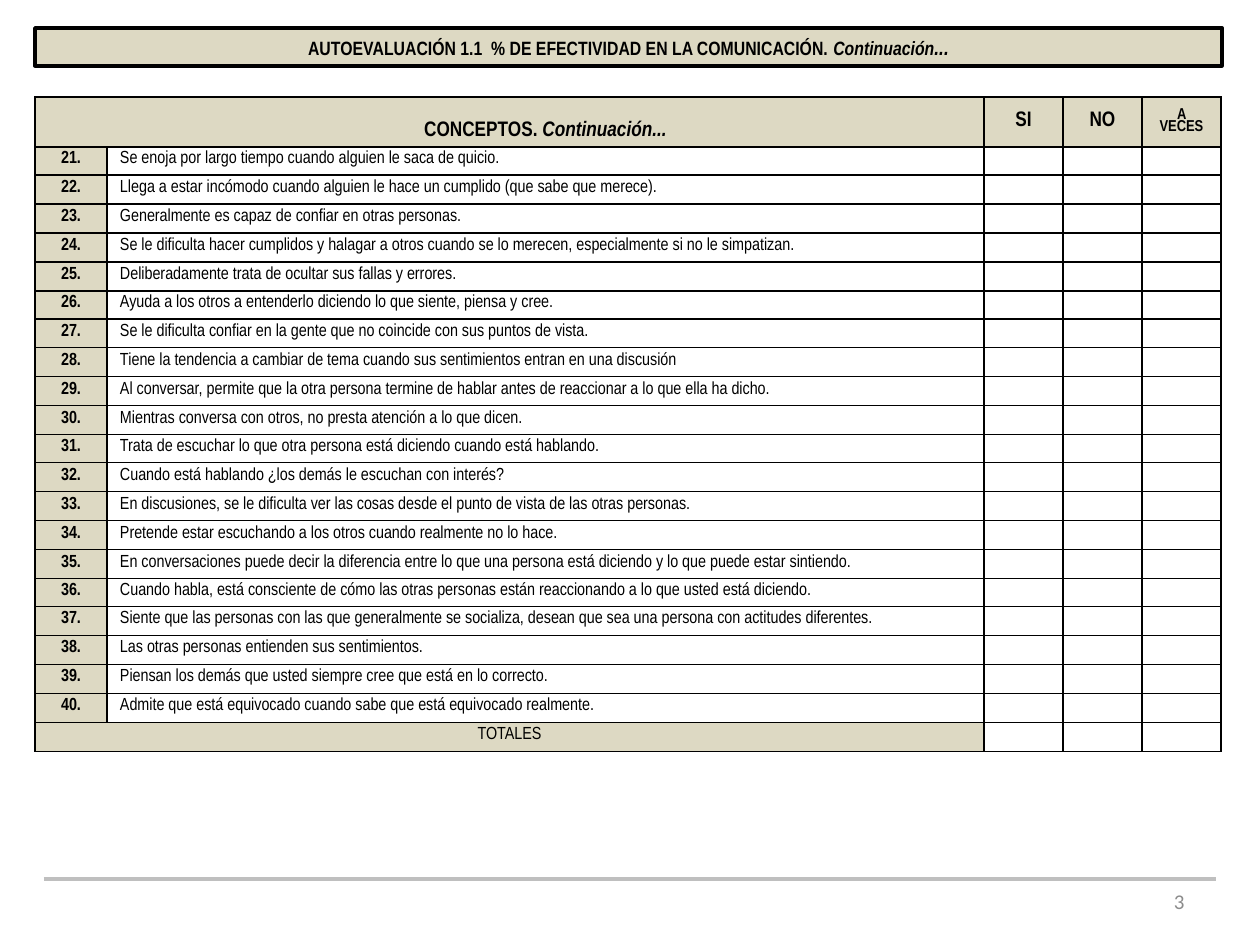
from lxml.etree import SubElement
from pptx import Presentation
from pptx.dml.color import RGBColor as Rgb
from pptx.enum.shapes import MSO_CONNECTOR as Connector, MSO_SHAPE as Shape
from pptx.enum.text import MSO_ANCHOR as Anchor, PP_ALIGN as Align
from pptx.oxml.ns import qn
from pptx.util import Emu, Pt

EMU_PER_PX = 914400 / 126
COLORS = {"black": "000000", "sand": "DDD9C3", "white": "FFFFFF", "rule": "BFBFBF", "number": "8C8C8C"}
NARROW = {"name": "Arial Narrow", "size": Pt(10), "bold": False, "italic": False}
BOLD = {**NARROW, "bold": True}
TITLE = {**BOLD, "size": Pt(11)}
HEADING = {**BOLD, "size": Pt(12)}
SMALL_HEADING = {**BOLD, "size": Pt(9)}
PAGE = {"name": "Calibri", "size": Pt(12)}
HEADER_INSETS = {"margin_left": 13, "margin_right": 13, "margin_top": 6, "margin_bottom": 6}
ROW_INSETS = {**HEADER_INSETS, "margin_top": 0, "margin_bottom": 3}

COLUMNS = [72, 877, 79, 79, 79]
HEADER_HEIGHT = 50
ROWS_HEIGHT = 605
FIRST_NUMBER = 21
STATEMENTS = [
    "Se enoja por largo tiempo cuando alguien le saca de quicio.",
    "Llega a estar incómodo cuando alguien le hace un cumplido (que sabe que merece).",
    "Generalmente es capaz de confiar en otras personas.",
    "Se le dificulta hacer cumplidos y halagar a otros cuando se lo merecen, especialmente si no le simpatizan.",
    "Deliberadamente trata de ocultar sus fallas y errores.",
    "Ayuda a los otros a entenderlo diciendo lo que siente, piensa y cree.",
    "Se le dificulta confiar en la gente que no coincide con sus puntos de vista.",
    "Tiene la tendencia a cambiar de tema cuando sus sentimientos entran en una discusión",
    "Al conversar, permite que la otra persona termine de hablar antes de reaccionar a lo que ella ha dicho.",
    "Mientras conversa con otros, no presta atención a lo que dicen.",
    "Trata de escuchar lo que otra persona está diciendo cuando está hablando.",
    "Cuando está hablando ¿los demás le escuchan con interés?",
    "En discusiones, se le dificulta ver las cosas desde el punto de vista de las otras personas.",
    "Pretende estar escuchando a los otros cuando realmente no lo hace.",
    "En conversaciones puede decir la diferencia entre lo que una persona está diciendo y lo que puede estar sintiendo.",
    "Cuando habla, está consciente de cómo las otras personas están reaccionando a lo que usted está diciendo.",
    "Siente que las personas con las que generalmente se socializa, desean que sea una persona con actitudes diferentes.",
    "Las otras personas entienden sus sentimientos.",
    "Piensan los demás que usted siempre cree que está en lo correcto.",
    "Admite que está equivocado cuando sabe que está equivocado realmente.",
]


def px(value):
    return Emu(round(value * EMU_PER_PX))


def color(name):
    return Rgb.from_string(COLORS[name])


class SlideBuilder:
    def __init__(self, slide):
        self.slide = slide

    def add_words(self, frame, runs, align, ink="black"):
        paragraph = frame.paragraphs[0]
        paragraph.alignment = align
        for words, style in runs:
            run = paragraph.add_run()
            run.text = words
            for key, value in style.items():
                setattr(run.font, key, value)
            run.font.color.rgb = color(ink)
        return paragraph

    def bar(self, left, top, width, height, runs):
        bar = self.slide.shapes.add_shape(Shape.RECTANGLE, *map(px, (left, top, width, height)))
        bar.shadow.inherit = False
        bar.fill.solid()
        bar.fill.fore_color.rgb = color("sand")
        bar.line.color.rgb = color("black")
        bar.line.width = Pt(2)
        bar.text_frame.word_wrap = True
        bar.text_frame.vertical_anchor = Anchor.MIDDLE
        self.add_words(bar.text_frame, runs, Align.CENTER)

    def rule(self, left, right, y):
        rule = self.slide.shapes.add_connector(Connector.STRAIGHT, *map(px, (left, y, right, y)))
        rule.line.color.rgb = color("rule")
        rule.line.width = Pt(2)
        SubElement(rule._element.spPr, qn("a:effectLst"))

    def label(self, left, top, width, height, runs, align, ink):
        box = self.slide.shapes.add_textbox(*map(px, (left, top, width, height)))
        box.text_frame.word_wrap = True
        box.text_frame.vertical_anchor = Anchor.MIDDLE
        self.add_words(box.text_frame, runs, align, ink)

    def table(self, left, top, columns, rows):
        table = self.slide.shapes.add_table(
            len(rows), len(columns), *map(px, (left, top, sum(columns), sum(rows)))).table
        table.first_row = table.horz_banding = False
        for column, width in zip(table.columns, columns):
            column.width = px(width)
        for row, height in zip(table.rows, rows):
            row.height = px(height)
        return table

    def cell(self, cell, fill, runs=(), align=Align.CENTER, anchor=Anchor.MIDDLE,
             insets=ROW_INSETS, open_side=None):
        for key, value in insets.items():
            setattr(cell, key, px(value))
        cell.vertical_anchor = anchor
        for side in "LRTB":
            border = SubElement(cell._tc.get_or_add_tcPr(), qn(f"a:ln{side}"), w=str(Pt(1)))
            if side == open_side:
                SubElement(border, qn("a:noFill"))
            else:
                ink = SubElement(border, qn("a:solidFill"))
                SubElement(ink, qn("a:srgbClr"), val=COLORS["black"])
        cell.fill.solid()
        cell.fill.fore_color.rgb = color(fill)
        paragraph = self.add_words(cell.text_frame, runs, align)
        if not runs:
            SubElement(paragraph._p, qn("a:endParaRPr"), sz="1000")
        return paragraph


def fill_questionnaire(builder):
    count = len(STATEMENTS) + 1
    edges = [ROWS_HEIGHT * i // count for i in range(count + 1)]
    heights = [low - high for high, low in zip(edges, edges[1:])]
    table = builder.table(35, 97, COLUMNS, [HEADER_HEIGHT, *heights])

    builder.cell(table.cell(0, 0), "sand", open_side="R")
    concepts = [("CONCEPTOS. ", HEADING), ("Continuación...", {**HEADING, "italic": True})]
    builder.cell(table.cell(0, 1), "sand", concepts, anchor=Anchor.BOTTOM,
                 insets=HEADER_INSETS, open_side="L")
    answers = [("SI", HEADING), ("NO", HEADING), ("A VECES", SMALL_HEADING)]
    for column, answer in enumerate(answers, 2):
        heading = builder.cell(table.cell(0, column), "sand", [answer], insets=HEADER_INSETS)
        heading.line_spacing = 0.8

    for row, statement in enumerate(STATEMENTS, 1):
        number = f"{FIRST_NUMBER + row - 1}."
        builder.cell(table.cell(row, 0), "sand", [(number, BOLD)])
        builder.cell(table.cell(row, 1), "white", [(statement, NARROW)], Align.JUSTIFY)

    table.cell(count, 0).merge(table.cell(count, 1))
    builder.cell(table.cell(count, 0), "sand", [("TOTALES", NARROW)])
    builder.cell(table.cell(count, 1), "sand")
    for row in range(1, count + 1):
        for column in range(2, len(COLUMNS)):
            builder.cell(table.cell(row, column), "white")


def main():
    deck = Presentation()
    deck.slide_width, deck.slide_height = px(1260), px(945)
    builder = SlideBuilder(deck.slides.add_slide(deck.slide_layouts[6]))
    builder.rule(44, 1216, 879)
    fill_questionnaire(builder)
    builder.bar(35, 28, 1187, 38, [
        ("AUTOEVALUACIÓN 1.1  % DE EFECTIVIDAD EN LA COMUNICACIÓN. ", TITLE),
        ("Continuación", {**TITLE, "italic": True}),
        ("...", {**HEADING, "italic": True}),
    ])
    builder.label(903, 876, 294, 50, [("3", PAGE)], Align.RIGHT, "number")
    deck.save("out.pptx")


if __name__ == "__main__":
    main()
